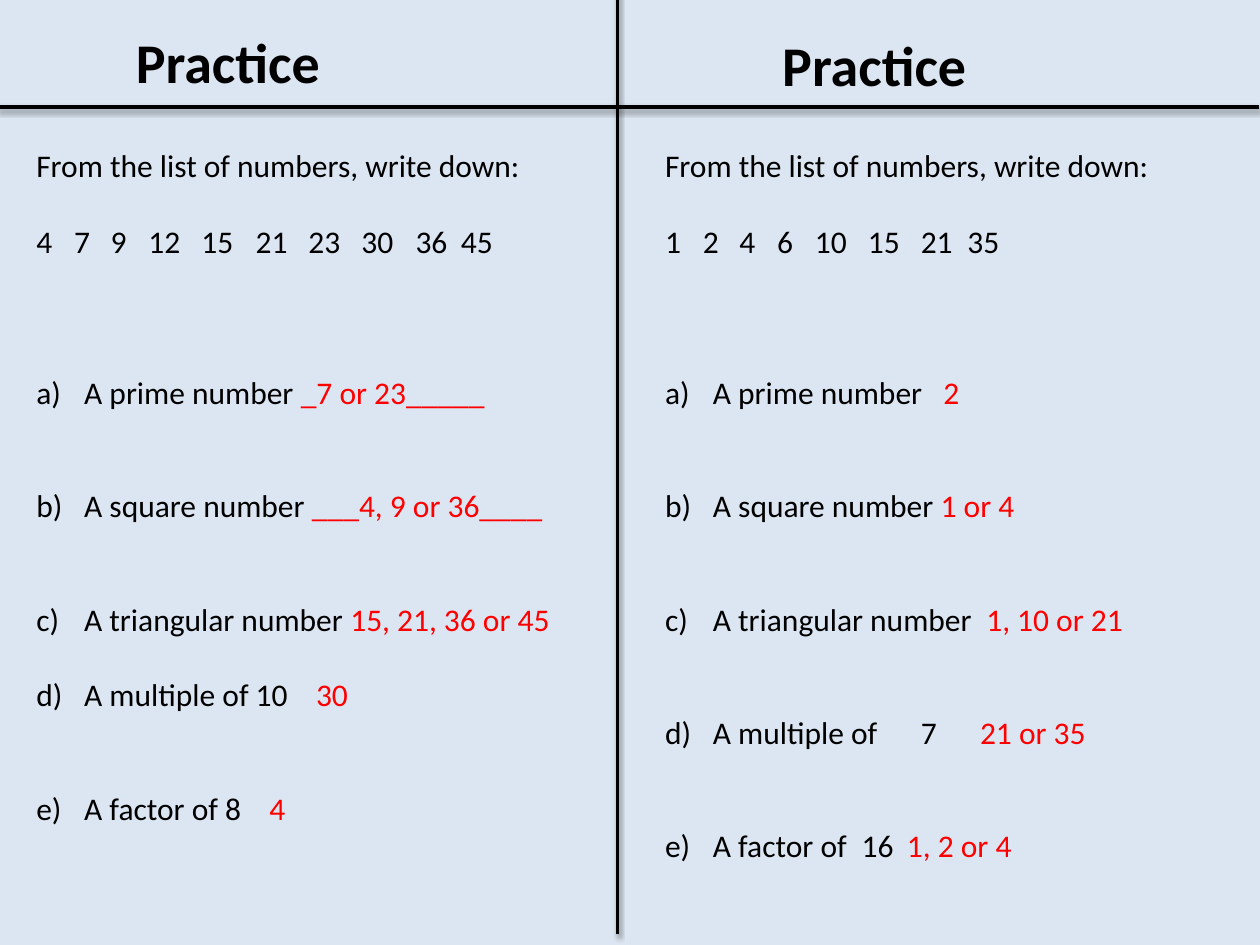
from dataclasses import dataclass

from lxml.etree import SubElement
from pptx import Presentation
from pptx.dml.color import RGBColor as RGB
from pptx.enum.shapes import MSO_CONNECTOR as Connector
from pptx.enum.text import MSO_AUTO_SIZE as AutoSize
from pptx.oxml import parse_xml
from pptx.oxml.ns import nsdecls, qn
from pptx.util import Inches, Pt


@dataclass(frozen=True)
class Theme:
    font: str = "Calibri"
    background: RGB = RGB(0xDC, 0xE6, 0xF2)
    ink: RGB = RGB(0, 0, 0)
    answer: RGB = RGB(0xFF, 0, 0)
    title_size: float = 32
    body_size: float = 18
    line_height: float = 21.6
    rule_width: float = 2


THEME = Theme()
HANGING = 0.38
DIGIT_WIDTH = 0.127
SPACE_WIDTH = 0.0565

INSTRUCTION = "From the list of numbers, write down:"
LEFT_NUMBERS = [4, 7, 9, 12, 15, 21, 23, 30, 36, 45]
RIGHT_NUMBERS = [1, 2, 4, 6, 10, 15, 21, 35]

# Each question: blank lines above, question, answer, tab stops
LEFT_QUESTIONS = [
    (3, "A prime number ", "_7 or 23_____", []),
    (2, "A square number ", "___4, 9 or 36____", []),
    (2, "A triangular number ", "15, 21, 36 or 45", []),
    (1, "A multiple of 10\t", "30", [2.22]),
    (2, "A factor of 8\t", "4", [1.85]),
]
RIGHT_QUESTIONS = [
    (3, "A prime number\t", "2", [2.21]),
    (2, "A square number ", "1 or 4", []),
    (2, "A triangular number\t", "1, 10 or 21", [2.55]),
    (2, "A multiple of\t7\t", "21 or 35", [1.68, 2.03]),
    (2, "A factor of\t16\t", "1, 2 or 4", [1.56, 1.92]),
]


def add_text_frame(slide, left, top, width, height):
    box = slide.shapes.add_textbox(*map(Inches, (left, top, width, height)))
    frame = box.text_frame
    frame.word_wrap = True
    frame.auto_size = AutoSize.SHAPE_TO_FIT_TEXT
    return frame


def add_run(paragraph, text, size, color, bold=False):
    run = paragraph.add_run()
    run.text = text
    font = run.font
    font.name, font.size, font.bold = THEME.font, Pt(size), bold
    font.color.rgb = color


def add_tab_stops(paragraph, stops):
    tab_list = SubElement(paragraph._p.get_or_add_pPr(), qn("a:tabLst"))
    for stop in stops:
        SubElement(tab_list, qn("a:tab"), pos=str(Inches(stop)), algn="l")


def number_stops(numbers):
    """Equal gaps of three spaces between numbers, two before the last."""
    stops, position = [], 0
    for number in numbers[:-1]:
        position += len(str(number)) * DIGIT_WIDTH + 3 * SPACE_WIDTH
        stops.append(round(position, 2))
    stops[-1] = round(position - SPACE_WIDTH, 2)
    return stops


def add_title(slide, left, top):
    frame = add_text_frame(slide, left, top, 2.81, 0.64)
    add_run(frame.paragraphs[0], "Practice", THEME.title_size, THEME.ink, bold=True)


def add_question(frame, blank_lines, question, answer, stops):
    paragraph = frame.add_paragraph()
    paragraph.space_before = Pt(blank_lines * THEME.line_height)
    properties = paragraph._p.get_or_add_pPr()
    properties.set("marL", str(Inches(HANGING)))
    properties.set("indent", str(-Inches(HANGING)))
    SubElement(properties, qn("a:buFont"), typeface="+mj-lt")
    SubElement(properties, qn("a:buAutoNum"), type="alphaLcParenR")
    if stops:
        add_tab_stops(paragraph, stops)
    add_run(paragraph, question, THEME.body_size, THEME.ink)
    add_run(paragraph, answer, THEME.body_size, THEME.answer)


def add_exercise(slide, left, height, numbers, questions):
    frame = add_text_frame(slide, left, 1.11, 4.5, height)
    add_run(frame.paragraphs[0], INSTRUCTION, THEME.body_size, THEME.ink)

    number_line = frame.add_paragraph()
    number_line.space_before = Pt(THEME.line_height)
    add_tab_stops(number_line, number_stops(numbers))
    add_run(number_line, "\t".join(map(str, numbers)), THEME.body_size, THEME.ink)

    for question in questions:
        add_question(frame, *question)


def add_divider(slide, *ends):
    divider = slide.shapes.add_connector(Connector.STRAIGHT, *map(Inches, ends))
    divider.line.color.rgb = THEME.ink
    divider.line.width = Pt(THEME.rule_width)
    divider._element.spPr.append(parse_xml(
        f'<a:effectLst {nsdecls("a")}>'
        '<a:outerShdw blurRad="40000" dist="20000" dir="5400000" rotWithShape="0">'
        f'<a:srgbClr val="{THEME.ink}"><a:alpha val="38000"/></a:srgbClr>'
        '</a:outerShdw></a:effectLst>'
    ))


def main():
    deck = Presentation()
    deck.slide_width, deck.slide_height = Inches(10), Inches(7.5)
    slide = deck.slides.add_slide(deck.slide_layouts[6])
    fill = slide.background.fill
    fill.solid()
    fill.fore_color.rgb = THEME.background

    add_title(slide, 0.98, 0.17)
    add_title(slide, 6.11, 0.19)
    add_divider(slide, -0.01, 0.85, 9.99, 0.85)
    add_divider(slide, 4.9, -0.08, 4.9, 7.41)
    add_exercise(slide, 0.19, 5.55, LEFT_NUMBERS, LEFT_QUESTIONS)
    add_exercise(slide, 5.18, 5.86, RIGHT_NUMBERS, RIGHT_QUESTIONS)
    deck.save("out.pptx")


if __name__ == "__main__":
    main()
